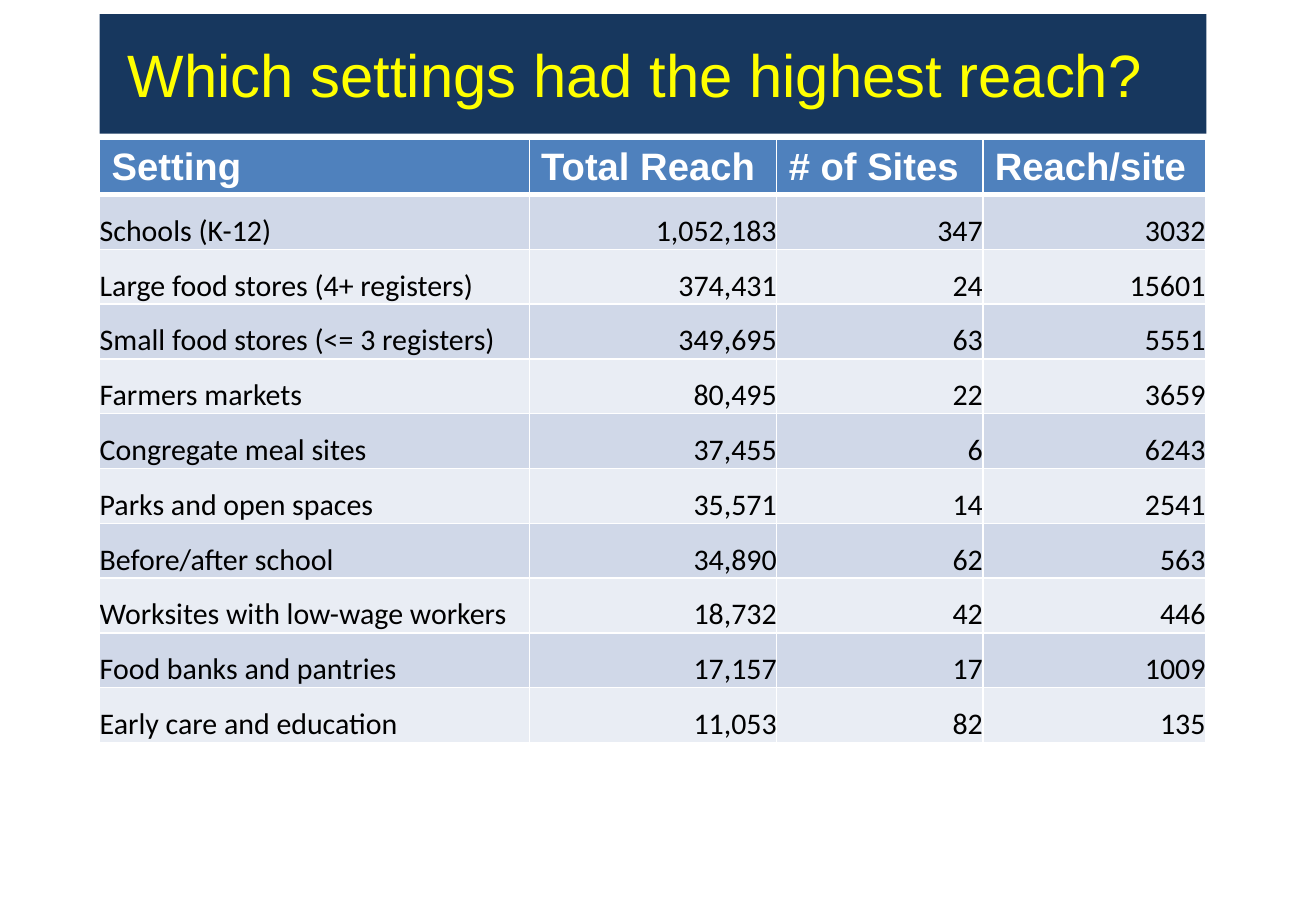
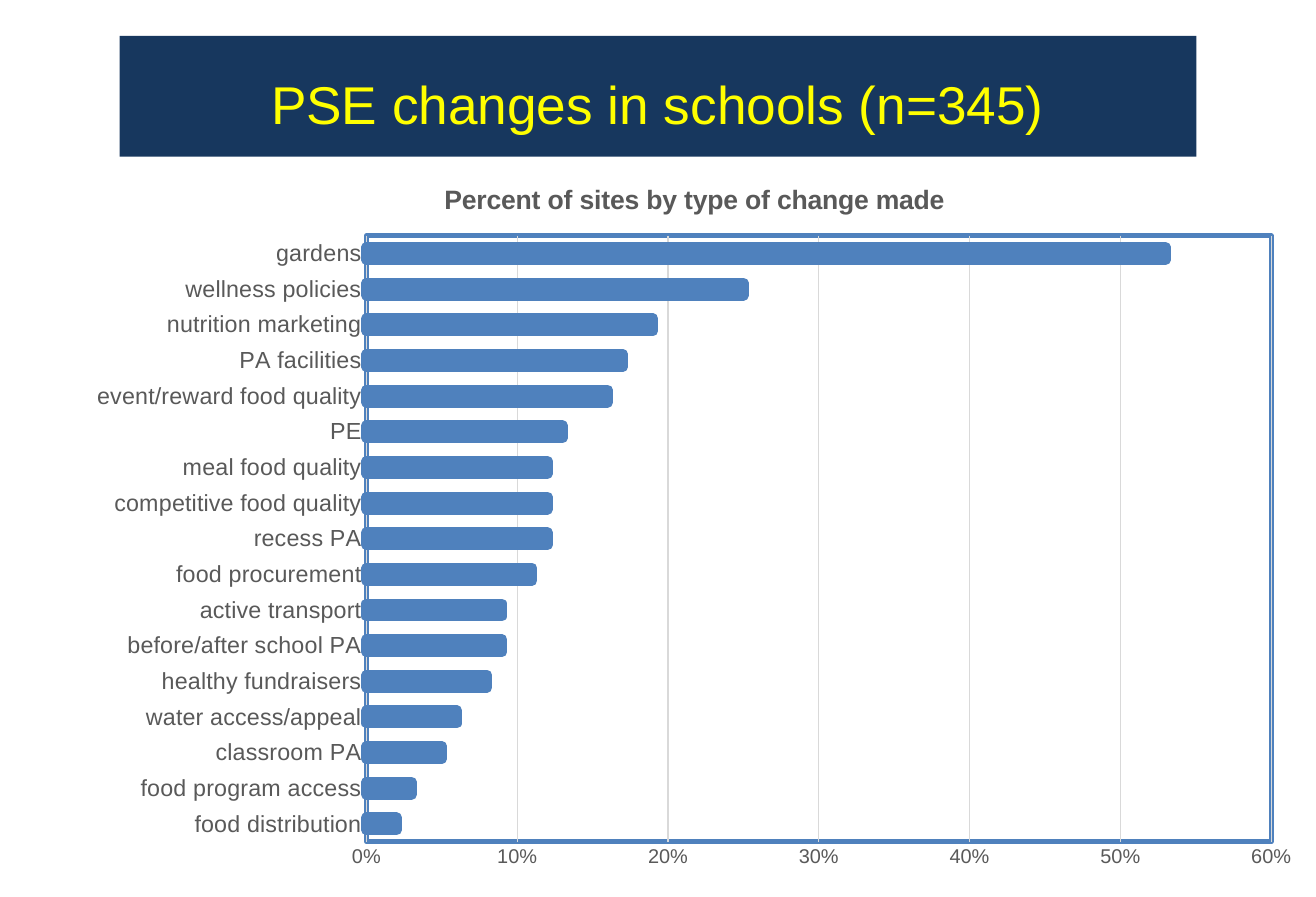
from lxml import etree
from pptx import Presentation
from pptx.chart.data import CategoryChartData
from pptx.dml.color import RGBColor
from pptx.enum.chart import XL_CHART_TYPE as ChartType, XL_TICK_MARK as Tick
from pptx.enum.text import MSO_ANCHOR as Anchor, MSO_AUTO_SIZE as AutoSize, PP_ALIGN as Align
from pptx.oxml import parse_xml
from pptx.oxml.ns import nsdecls, qn
from pptx.util import Pt

COLORS = {
    "navy": "17375E", "yellow": "FFFF00", "blue": "4F81BD", "white": "FFFFFF",
    "black": "000000", "gray": "595959", "grid": "D9D9D9",
    "band_dark": "D0D8E8", "band_light": "E9EDF4",
}
HEADING_FONT, BODY_FONT = "Arial", "Calibri"

SETTINGS = [
    ("Setting", "Total Reach", "# of Sites", "Reach/site"),
    ("Schools (K-12)", "1,052,183", "347", "3032"),
    ("Large food stores (4+ registers)", "374,431", "24", "15601"),
    ("Small food stores (<= 3 registers)", "349,695", "63", "5551"),
    ("Farmers markets", "80,495", "22", "3659"),
    ("Congregate meal sites", "37,455", "6", "6243"),
    ("Parks and open spaces", "35,571", "14", "2541"),
    ("Before/after school", "34,890", "62", "563"),
    ("Worksites with low-wage workers", "18,732", "42", "446"),
    ("Food banks and pantries", "17,157", "17", "1009"),
    ("Early care and education", "11,053", "82", "135"),
]

CHANGES = {
    "food distribution": 0.02, "food program access": 0.03, "classroom PA": 0.05,
    "water access/appeal": 0.06, "healthy fundraisers": 0.08,
    "before/after school PA": 0.09, "active transport": 0.09,
    "food procurement": 0.11, "recess PA": 0.12, "competitive food quality": 0.12,
    "meal food quality": 0.12, "PE": 0.13, "event/reward food quality": 0.16,
    "PA facilities": 0.17, "nutrition marketing": 0.19, "wellness policies": 0.25,
    "gardens": 0.53,
}


def rgb(name):
    return RGBColor.from_string(COLORS[name])


def style_font(font, size, color, name=HEADING_FONT, bold=False):
    font.size, font.name, font.bold = Pt(size), name, bold
    font.color.rgb = rgb(color)


def style_line(line, color, width):
    line.color.rgb = rgb(color)
    line.width = Pt(width)


def set_borders(cell, top=1, bottom=1):
    """Draw white cell borders; must run before the cell fill is set."""
    tc_pr = cell._tc.get_or_add_tcPr()
    for side, width in (("L", 1), ("R", 1), ("T", top), ("B", bottom)):
        ln = etree.SubElement(tc_pr, qn(f"a:ln{side}"), w=str(Pt(width)))
        fill = etree.SubElement(ln, qn("a:solidFill"))
        etree.SubElement(fill, qn("a:srgbClr"), val=COLORS["white"])


def shape_props(fill, line):
    return parse_xml(f'<c:spPr {nsdecls("c", "a")}>{fill}{line}</c:spPr>')


def solid(color):
    return f'<a:solidFill><a:srgbClr val="{COLORS[color]}"/></a:solidFill>'


def frame_plot(chart, x, y, w, h):
    """Fix the inner plot area, as fractions of the chart, and outline it."""
    plot_area = chart._chartSpace.chart.plotArea
    for old in plot_area.findall(qn("c:layout")):
        plot_area.remove(old)
    places = "".join(f'<c:{key} val="{val}"/>' for key, val in (
        ("layoutTarget", "inner"), ("xMode", "edge"), ("yMode", "edge"),
        ("x", x), ("y", y), ("w", w), ("h", h)))
    plot_area.insert(0, parse_xml(
        f'<c:layout {nsdecls("c")}><c:manualLayout>{places}</c:manualLayout></c:layout>'))
    plot_area.append(shape_props(
        "<a:noFill/>", f'<a:ln w="{Pt(3)}" cmpd="dbl">{solid("blue")}</a:ln>'))


class Deck:
    def __init__(self):
        self.prs = Presentation()
        self.prs.slide_width, self.prs.slide_height = Pt(792), Pt(540)
        self.s = None

    def slide(self, title, box, size, right_inset=7.2):
        self.s = self.prs.slides.add_slide(self.prs.slide_layouts[5])
        sp = self.s.shapes.title
        sp.left, sp.top, sp.width, sp.height = map(Pt, box)
        sp.fill.solid()
        sp.fill.fore_color.rgb = rgb("navy")
        tf = sp.text_frame
        tf.text = title
        tf.word_wrap, tf.auto_size = True, AutoSize.NONE
        tf.vertical_anchor = Anchor.MIDDLE
        tf.margin_left = tf.margin_top = tf.margin_bottom = Pt(7.2)
        tf.margin_right = Pt(right_inset)
        p = tf.paragraphs[0]
        p.alignment = Align.CENTER
        style_font(p.runs[0].font, size, "yellow")

    def table(self, rows, left, top, widths, row_height):
        frame = self.s.shapes.add_table(
            len(rows), len(widths), Pt(left), Pt(top),
            Pt(sum(widths)), Pt(row_height * len(rows)))
        table = frame.table
        for col, width in zip(table.columns, widths):
            col.width = Pt(width)
        for i, row in enumerate(rows):
            table.rows[i].height = Pt(row_height)
            for j, text in enumerate(row):
                self.cell(table.cell(i, j), text, i, j)

    def cell(self, cell, text, i, j):
        cell.text = text
        p = cell.text_frame.paragraphs[0]
        set_borders(cell, top=3 if i == 1 else 1, bottom=3 if i == 0 else 1)
        cell.fill.solid()
        if i == 0:
            cell.fill.fore_color.rgb = rgb("blue")
            style_font(p.runs[0].font, 23, "white", bold=True)
            return
        cell.fill.fore_color.rgb = rgb("band_dark" if i % 2 else "band_light")
        cell.vertical_anchor = Anchor.BOTTOM
        cell.margin_left = cell.margin_right = cell.margin_top = cell.margin_bottom = 0
        p.alignment = Align.RIGHT if j else Align.LEFT
        style_font(p.runs[0].font, 18, "black", BODY_FONT)

    def bar_chart(self, title, values, box):
        data = CategoryChartData(number_format="0%")
        data.categories = list(values)
        data.add_series(title, list(values.values()))
        chart = self.s.shapes.add_chart(
            ChartType.BAR_CLUSTERED, *map(Pt, box), data).chart
        style_font(chart.font, 10, "black")
        chart.has_legend = False
        chart.has_title = True
        tf = chart.chart_title.text_frame
        tf.text = title
        style_font(tf.paragraphs[0].runs[0].font, 16, "gray", bold=True)
        chart.chart_title.include_in_layout = False

        cat, val = chart.category_axis, chart.value_axis
        for axis, size in ((cat, 14), (val, 12)):
            axis.major_tick_mark = axis.minor_tick_mark = Tick.NONE
            style_font(axis.tick_labels.font, size, "gray")
        cat.has_major_gridlines = False
        style_line(cat.format.line, "grid", 0.75)
        val.minimum_scale, val.maximum_scale, val.major_unit = 0, 0.6, 0.1
        val.tick_labels.number_format = "0%"
        val.tick_labels.number_format_is_linked = False
        val.format.line.fill.background()
        val.has_major_gridlines = True
        style_line(val.major_gridlines.format.line, "grid", 0.75)

        plot = chart.plots[0]
        plot.gap_width, plot.vary_by_categories = 182, False
        bars = plot.series[0].format
        bars.fill.solid()
        bars.fill.fore_color.rgb = rgb("blue")
        style_line(bars.line, "blue", 6.25)
        etree.SubElement(bars.line._get_or_add_ln(), qn("a:round"))

        frame_plot(chart, 0.236, 0.109, 0.728, 0.835)
        chart._chartSpace.chart.addnext(
            shape_props(solid("white"), "<a:ln><a:noFill/></a:ln>"))


def main():
    deck = Deck()
    deck.slide("Which settings had the highest reach?", (60, 8.5, 666, 72), 36,
               right_inset=28.8)
    deck.table(SETTINGS, 60, 84, (258.5, 149, 124, 134), 33)
    deck.slide("PSE changes in schools (n=345)", (72, 21.6, 648, 80.6), 32)
    deck.bar_chart("Percent of sites by type of change made", CHANGES,
                   (44, 94.3, 748, 437))
    deck.prs.save("out.pptx")


if __name__ == "__main__":
    main()
